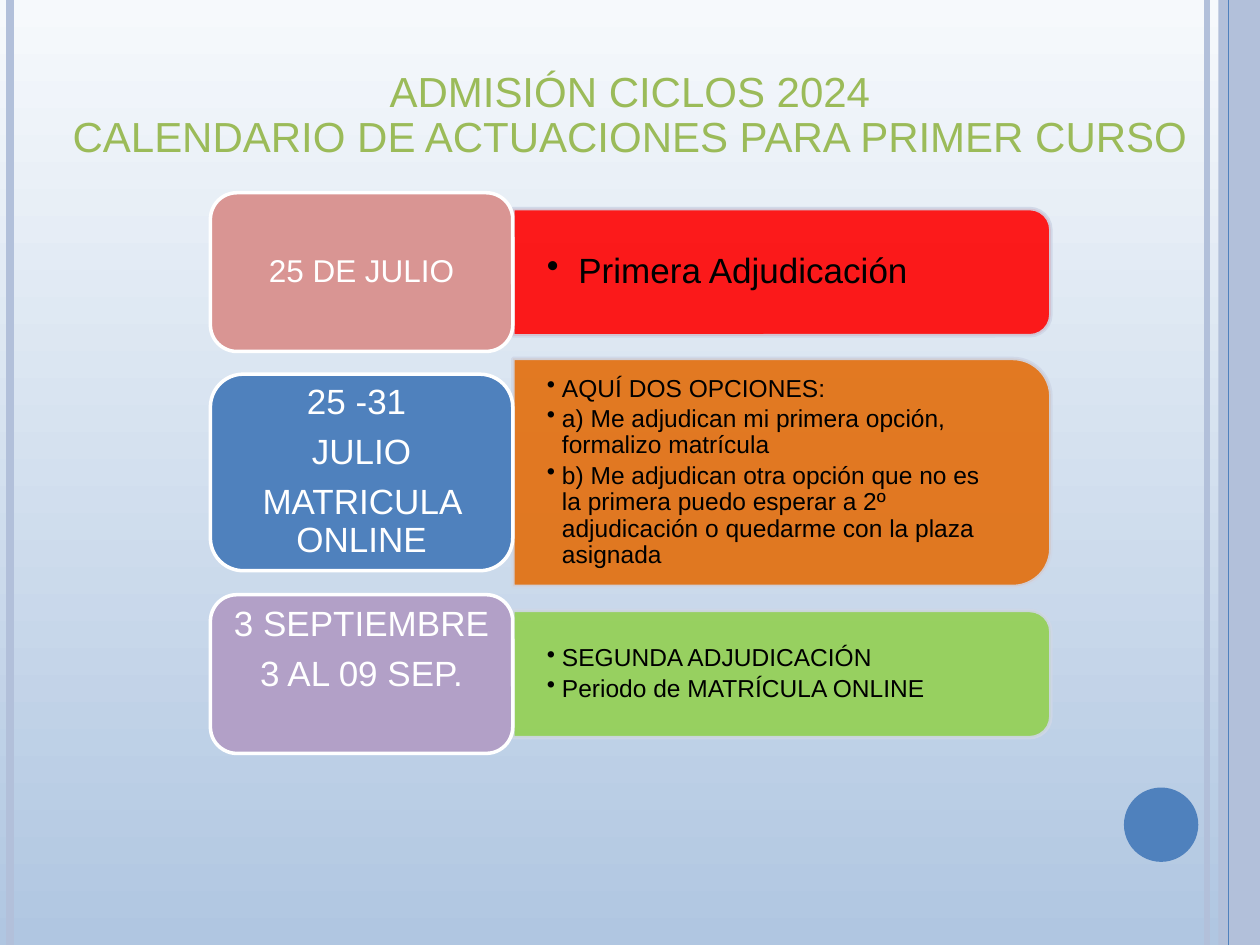
from dataclasses import dataclass

from lxml.etree import SubElement
from pptx import Presentation
from pptx.dml.color import RGBColor as RGB
from pptx.enum.shapes import MSO_CONNECTOR as CONN, MSO_SHAPE as SHAPE
from pptx.enum.text import MSO_ANCHOR as ANCHOR, PP_ALIGN as ALIGN
from pptx.oxml.ns import qn
from pptx.util import Emu, Pt

PX = 9144
WIDTH, HEIGHT = 1000, 750


@dataclass(frozen=True)
class Theme:
    font: str = "Arial"
    sky_top: str = "F6F9FC"
    sky_bottom: str = "B0C6E1"
    rail: str = "B2C0DA"
    accent: str = "4F81BD"
    title: str = "9BBB59"
    light: str = "FFFFFF"
    dark: str = "000000"
    panel_edge: str = "CFD7E7"
    title_size: int = 24
    large: int = 20
    medium: int = 18
    small: int = 14
    edge_width: int = 2
    line_spacing: float = 0.9
    panel_alpha: int = 89


T = Theme()


@dataclass(frozen=True)
class Rail:
    x: int
    color: str
    width: float


@dataclass(frozen=True)
class Label:
    text: str
    size: int
    color: str
    height: int
    bottom_inset: int = 4


@dataclass(frozen=True)
class Panel:
    text: str
    size: int
    color: str
    height: int
    indent: int = 12


@dataclass(frozen=True)
class Row:
    middle: int
    label: Label
    panel: Panel


LABEL_X, LABEL_W = 167, 240
PANEL_X, PANEL_W = LABEL_X + LABEL_W, 427
CORNER = 0.167
CORNER_INSET = 0.29 * CORNER

RAILS = [Rail(958, T.rail, 3), Rail(8, T.rail, 4.5)]
INNER_RAIL = Rail(975, T.accent, 0.75)

ROWS = [
    Row(216, Label("25 DE JULIO", T.medium, "D99593", 126),
        Panel("Primera Adjudicación", T.large, "FF0000", 101, 25)),
    Row(375, Label("25 -31 \nJULIO\nMATRICULA ONLINE", T.large, T.accent, 156),
        Panel("AQUÍ DOS OPCIONES:\n"
              "a) Me adjudican mi primera opción, formalizo matrícula\n"
              "b) Me adjudican otra opción que no es la primera puedo esperar "
              "a 2º adjudicación o quedarme con la plaza asignada",
              T.small, "E36C09", 181)),
    Row(535, Label("3 SEPTIEMBRE\n3 AL 09 SEP.", T.large, "B2A0C7", 126, 42),
        Panel("SEGUNDA ADJUDICACIÓN\nPeriodo de MATRÍCULA ONLINE",
              T.small, "92D050", 101)),
]


def px(n: float) -> Emu:
    return Emu(round(n * PX))


def box(x: float, y: float, w: float, h: float) -> list[Emu]:
    return [px(n) for n in (x, y, w, h)]


def rgb(color: str) -> RGB:
    return RGB.from_string(color)


def add_rail(s, rail: Rail) -> None:
    line = s.shapes.add_connector(CONN.STRAIGHT, px(rail.x), 0, px(rail.x), px(HEIGHT))
    line.line.color.rgb = rgb(rail.color)
    line.line.width = Pt(rail.width)
    SubElement(line._element.spPr, qn("a:effectLst"))


def add_shape(s, kind: SHAPE, place: list[Emu], fill: str, edge: str | None = None):
    sp = s.shapes.add_shape(kind, *place)
    sp.shadow.inherit = False
    sp.fill.solid()
    sp.fill.fore_color.rgb = rgb(fill)
    if edge:
        sp.line.color.rgb = rgb(edge)
        sp.line.width = Pt(T.edge_width)
    else:
        sp.line.fill.background()
    return sp


def write(sp, text: str, size: int, color: str, insets: tuple[int, int, int, int],
          align: ALIGN = ALIGN.CENTER, gap: float = 0) -> None:
    tf = sp.text_frame
    tf.text = text
    tf.word_wrap = True
    tf.vertical_anchor = ANCHOR.MIDDLE
    tf.margin_left, tf.margin_top, tf.margin_right, tf.margin_bottom = map(px, insets)
    for i, p in enumerate(tf.paragraphs):
        p.alignment = align
        p.line_spacing = T.line_spacing
        p.space_before = Pt(gap if i else 0)
        for r in p.runs:
            r.font.name = T.font
            r.font.size = Pt(size)
            r.font.color.rgb = rgb(color)


def add_bullets(sp, indent: int) -> None:
    for p in sp.text_frame.paragraphs:
        props = p._p.get_or_add_pPr()
        props.set("marL", str(px(indent)))
        props.set("indent", str(px(-indent)))
        SubElement(props, qn("a:buChar"), char="•")


def add_panel(s, panel: Panel, middle: int) -> None:
    h = panel.height
    center = PANEL_X + PANEL_W / 2
    place = box(center - h / 2, middle - PANEL_W / 2, h, PANEL_W)
    sp = add_shape(s, SHAPE.ROUND_2_SAME_RECTANGLE, place, panel.color, T.panel_edge)
    sp.rotation = 90
    sp.adjustments[0], sp.adjustments[1] = CORNER, 0
    for color in sp._element.spPr.iter(qn("a:srgbClr")):
        SubElement(color, qn("a:alpha"), val=str(T.panel_alpha * 1000))
    inset = round(h * CORNER_INSET)
    tb = s.shapes.add_textbox(
        *box(PANEL_X, middle - h / 2 + inset, PANEL_W - inset, h - 2 * inset))
    write(tb, panel.text, panel.size, T.dark, (27, 14, 27, 14), ALIGN.LEFT, 2.1)
    add_bullets(tb, panel.indent)


def add_label(s, label: Label, middle: int) -> None:
    place = box(LABEL_X, middle - label.height / 2, LABEL_W, label.height)
    sp = add_shape(s, SHAPE.ROUNDED_RECTANGLE, place, label.color, T.light)
    sp.adjustments[0] = CORNER
    write(sp, label.text, label.size, T.light, (8, 4, 8, label.bottom_inset), gap=7)


def paint_background(s) -> None:
    fill = s.background.fill
    fill.gradient()
    fill.gradient_angle = 270
    for stop, color in zip(fill.gradient_stops, (T.sky_top, T.sky_bottom)):
        stop.color.rgb = rgb(color)


def main() -> None:
    prs = Presentation()
    prs.slide_width, prs.slide_height = px(WIDTH), px(HEIGHT)
    s = prs.slides.add_slide(prs.slide_layouts[6])
    paint_background(s)
    for rail in RAILS:
        add_rail(s, rail)
    add_shape(s, SHAPE.RECTANGLE, box(967, 0, 33, HEIGHT), T.rail)
    add_rail(s, INNER_RAIL)
    add_shape(s, SHAPE.OVAL, box(892, 625, 59, 59), T.accent)
    title = s.shapes.add_textbox(*box(50, 30, 900, 125))
    write(title, "ADMISIÓN CICLOS 2024\vCALENDARIO DE ACTUACIONES PARA PRIMER CURSO",
          T.title_size, T.title, (0, 0, 0, 0))
    for row in ROWS:
        add_panel(s, row.panel, row.middle)
        add_label(s, row.label, row.middle)
    prs.save("out.pptx")


if __name__ == "__main__":
    main()
